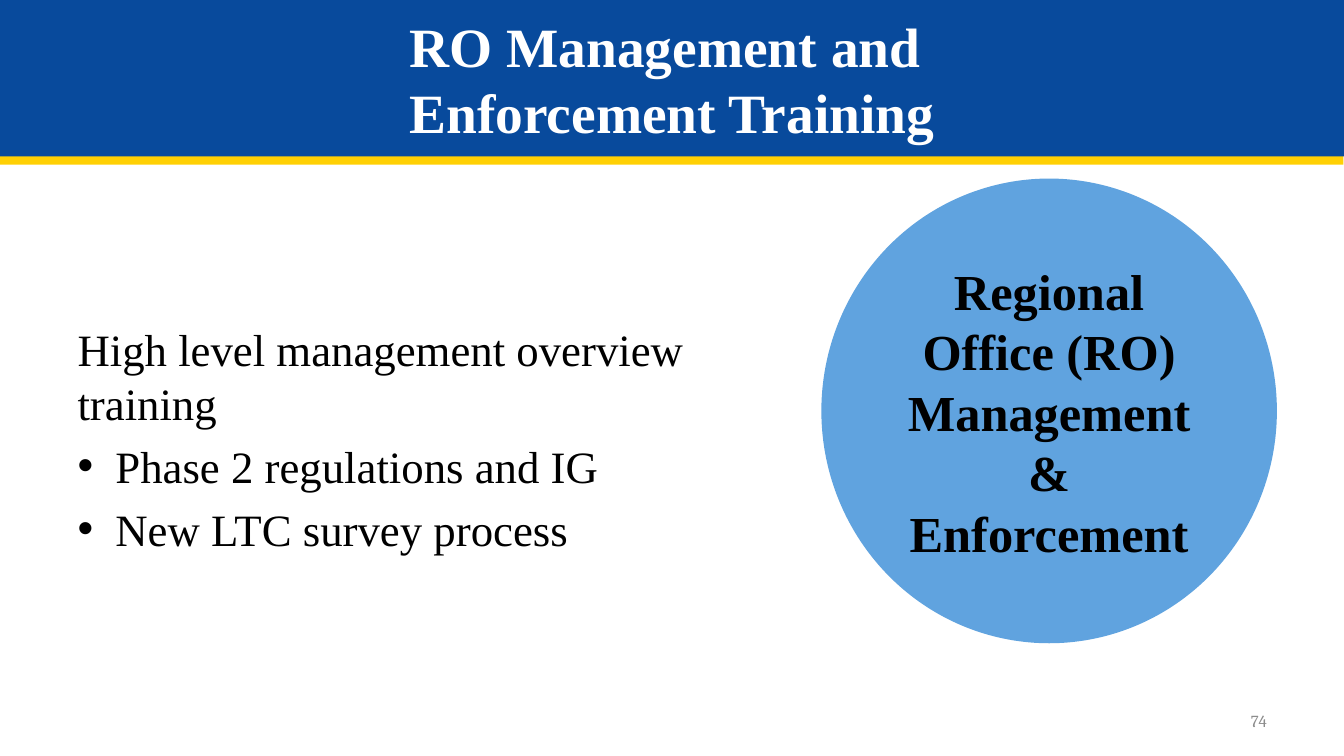
"""Build the slide on regional office management and enforcement training."""
from lxml import etree
from pptx import Presentation
from pptx.dml.color import RGBColor
from pptx.enum.shapes import MSO_SHAPE
from pptx.enum.text import MSO_ANCHOR, MSO_AUTO_SIZE, PP_ALIGN
from pptx.oxml.ns import qn
from pptx.util import Cm, Pt

BLUE = RGBColor(0x08, 0x4A, 0x9C)
YELLOW = RGBColor(0xFF, 0xD0, 0x04)
SKY = RGBColor(0x60, 0xA3, 0xDF)
WHITE = RGBColor(0xFF, 0xFF, 0xFF)
BLACK = RGBColor(0, 0, 0)
GREY = RGBColor(0x8C, 0x8C, 0x8C)
SERIF = "Times New Roman"
LEFT, CENTER, RIGHT = PP_ALIGN.LEFT, PP_ALIGN.CENTER, PP_ALIGN.RIGHT
MIDDLE = MSO_ANCHOR.MIDDLE
NO_FIT = MSO_AUTO_SIZE.NONE
CIRCLE = MSO_SHAPE.FLOWCHART_CONNECTOR


def place(sp, left, top, width, height):
    box = {"left": left, "top": top, "width": width, "height": height}
    for name, value in box.items():
        setattr(sp, name, Cm(value))


def write(sp, lines, align, color, **font):
    tf = sp.text_frame
    tf.text = "\n".join(lines)
    frame = {"word_wrap": True, "auto_size": NO_FIT, "vertical_anchor": MIDDLE}
    for name, value in frame.items():
        setattr(tf, name, value)
    for p in tf.paragraphs:
        p.alignment = align
        for r in p.runs:
            r.font.color.rgb = color
            for name, value in font.items():
                setattr(r.font, name, value)


prs = Presentation()
prs.slide_width, prs.slide_height = Cm(33.87), Cm(19.05)
s = prs.slides.add_slide(prs.slide_layouts[1])

title = s.shapes.title
place(title, 0, 0, 33.87, 3.94)
title.fill.solid()
title.fill.fore_color.rgb = BLUE
effects = etree.SubElement(title.element.spPr, qn("a:effectLst"))
shadow = etree.SubElement(effects, qn("a:outerShdw"), dist=str(Pt(6)),
                          dir=str(94 * 60000), algn="tl", rotWithShape="0")
etree.SubElement(shadow, qn("a:srgbClr"), val=str(YELLOW))
write(title, ["RO Management and \vEnforcement Training"], CENTER, WHITE,
      name=SERIF, size=Pt(39.6), bold=True)

body = s.placeholders[1]
place(body, 1.7, 5.08, 18.67, 11.94)
write(body, ["High level management overview training",
             "Phase 2 regulations and IG",
             "New LTC survey process"], LEFT, BLACK, name=SERIF, size=Pt(32))
p = body.text_frame.paragraphs[0]
pPr = p._p.get_or_add_pPr()
pPr.set("marL", "0")
pPr.set("indent", "0")
etree.SubElement(pPr, qn("a:buNone"))
p.space_before = Pt(0)

number = s.shapes.add_textbox(Cm(24.28), Cm(17.65), Cm(7.9), Cm(1.02))
write(number, ["74"], RIGHT, GREY, name="Cambria", size=Pt(12))

circle = s.shapes.add_shape(CIRCLE, Cm(20.7), Cm(4.5), Cm(11.48), Cm(11.71))
circle.shadow.inherit = False
circle.fill.solid()
circle.fill.fore_color.rgb = SKY
circle.line.fill.background()
write(circle, ["Regional Office (RO)\vManagement & Enforcement"], CENTER, BLACK,
      name=SERIF, size=Pt(36), bold=True)

prs.save("out.pptx")
